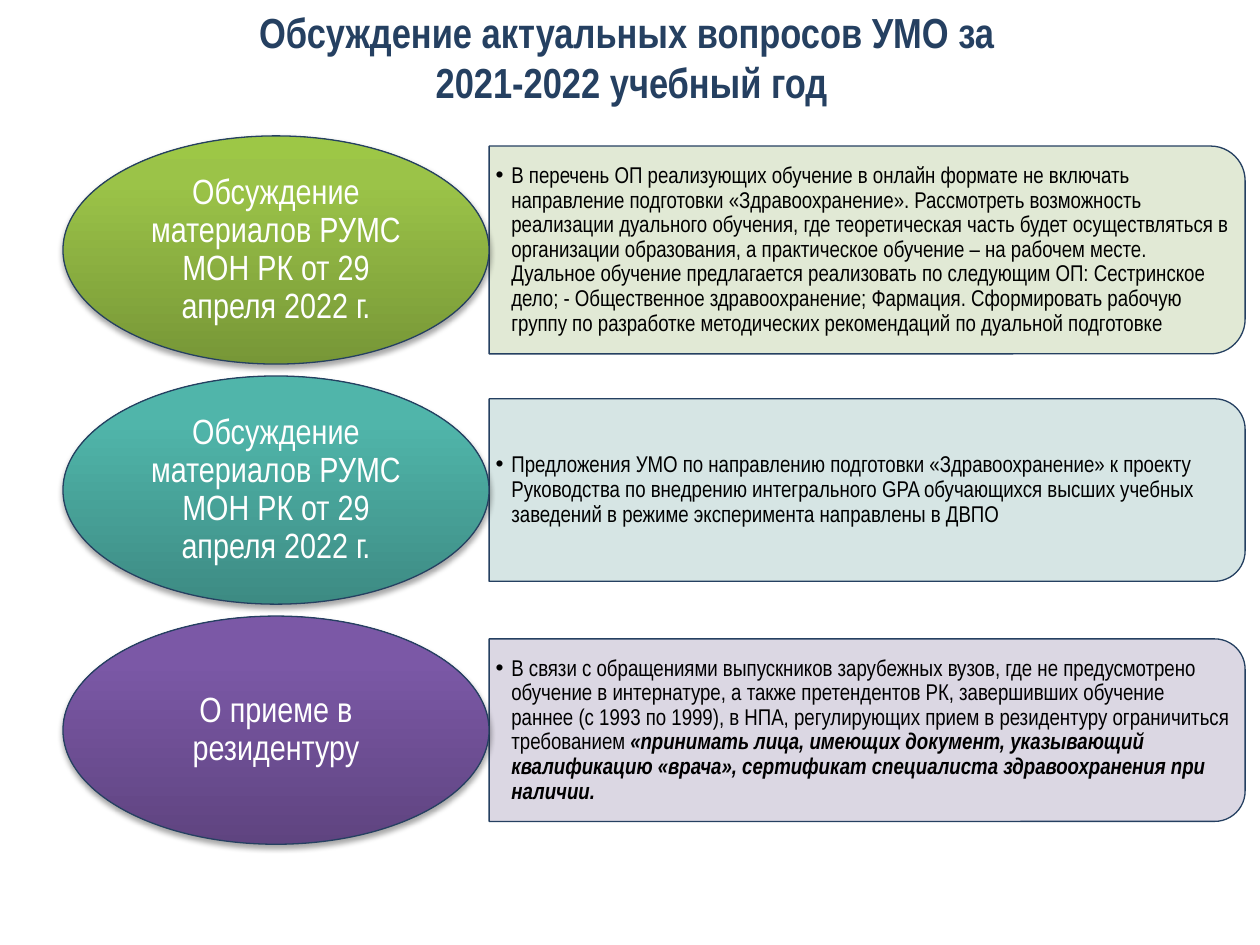
from pptx import Presentation
from pptx.dml.color import RGBColor
from pptx.enum.shapes import MSO_SHAPE
from pptx.enum.text import MSO_ANCHOR, PP_ALIGN
from pptx.oxml import parse_xml
from pptx.oxml.ns import nsdecls, qn
from pptx.util import Cm, Pt

ELLIPSE, PANEL = MSO_SHAPE.OVAL, MSO_SHAPE.ROUND_2_SAME_RECTANGLE
CENTER, LEFT = PP_ALIGN.CENTER, PP_ALIGN.LEFT
TOP, MIDDLE = MSO_ANCHOR.TOP, MSO_ANCHOR.MIDDLE

THEME = {
    "font": "Arial Narrow",
    "navy": "254061", "white": "FFFFFF", "black": "000000",
    "title_size": 24, "topic_size": 20, "detail_size": 13,
}

# Each row: topic, panel height in cm, panel colour, gradient, plain text, emphasised text
RUMS = "Обсуждение материалов РУМС МОН РК от 29 апреля 2022 г."
ROWS = [
    (RUMS, 4.19, "DEE7D1", ("779737", "9BC348", "9DC746"),
     "В перечень ОП реализующих обучение в онлайн формате не включать направление "
     "подготовки «Здравоохранение». Рассмотреть возможность реализации дуального обучения, "
     "где теоретическая часть будет осуществляться в организации образования, а практическое "
     "обучение – на рабочем месте. Дуальное обучение предлагается реализовать по следующим ОП: "
     "Сестринское дело; - Общественное здравоохранение; Фармация. Сформировать рабочую группу "
     "по разработке методических рекомендаций по дуальной подготовке", ""),
    (RUMS, 3.68, "D2E3E2", ("3D8B83", "50B5AA", "4EB8AC"),
     "Предложения УМО по направлению подготовки «Здравоохранение» к проекту Руководства по "
     "внедрению интегрального GPA обучающихся высших учебных заведений в режиме эксперимента "
     "направлены в ДВПО", ""),
    ("О приеме в резидентуру", 3.68, "D8D3E0", ("5F4480", "7B58A6", "7C57A8"),
     "В связи с обращениями выпускников зарубежных вузов, где не предусмотрено обучение в "
     "интернатуре, а также претендентов РК, завершивших обучение раннее (с 1993 по 1999), в НПА, "
     "регулирующих прием в резидентуру ограничиться требованием ",
     "«принимать лица, имеющих документ, указывающий квалификацию «врача», сертификат "
     "специалиста здравоохранения при наличии."),
]
FIRST_CENTER, ROW_STEP = 5.04, 4.84
ELLIPSE_LEFT, ELLIPSE_WIDTH, ELLIPSE_HEIGHT = 1.27, 8.59, 4.6
PANEL_LEFT, PANEL_WIDTH = ELLIPSE_LEFT + ELLIPSE_WIDTH, 15.24


def write(frame, spans, size, color, align, anchor, margins):
    """Fill a text frame with one paragraph of (text, emphasised) spans."""
    side, edge = Cm(margins[0]), Cm(margins[1])
    settings = {"word_wrap": True, "vertical_anchor": anchor, "margin_left": side,
                "margin_right": side, "margin_top": edge, "margin_bottom": edge}
    for name, value in settings.items():
        setattr(frame, name, value)
    para = frame.paragraphs[0]
    para.alignment = align
    for text, emphasised in spans:
        span = para.add_run()
        span.text = text
        font = {"name": THEME["font"], "size": Pt(size), "bold": emphasised, "italic": emphasised}
        for name, value in font.items():
            setattr(span.font, name, value)
        span.font.color.rgb = RGBColor.from_string(color)
    return para


def outline(shape):
    """Give a shape the thin navy line and no inherited shadow."""
    shape.line.color.rgb = RGBColor.from_string(THEME["navy"])
    shape.line.width = Pt(0.75)
    shape.shadow.inherit = False


deck = Presentation()
deck.slide_width, deck.slide_height = Cm(25.4), Cm(19.05)
page = deck.slides.add_slide(deck.slide_layouts[5])

# Title
title = page.shapes.title
title.left, title.top, title.width, title.height = Cm(1.3), Cm(0), Cm(22.86), Cm(3.18)
para = write(title.text_frame, [("Обсуждение актуальных вопросов УМО за ", True)],
             THEME["title_size"], THEME["navy"], CENTER, TOP, (0.25, 0.13))
para.add_line_break()
write(title.text_frame, [("2021-2022 учебный год", True)],
      THEME["title_size"], THEME["navy"], CENTER, TOP, (0.25, 0.13))
for span in para.runs:
    span.font.italic = False

for index, (topic, height, tint, gradient, plain, strong) in enumerate(ROWS):
    middle = FIRST_CENTER + index * ROW_STEP

    # Panel, turned so that its rounded corners are on the right
    panel = page.shapes.add_shape(
        PANEL, Cm(PANEL_LEFT + (PANEL_WIDTH - height) / 2), Cm(middle - PANEL_WIDTH / 2),
        Cm(height), Cm(PANEL_WIDTH))
    panel.rotation = 90
    panel.fill.solid()
    panel.fill.fore_color.rgb = RGBColor.from_string(tint)
    tint_xml = next(panel.fill._xPr.iter(qn("a:srgbClr")))
    tint_xml.append(parse_xml(f'<a:alpha {nsdecls("a")} val="90000"/>'))
    outline(panel)

    # Bulleted detail over the panel
    box_height = height - 0.4
    box = page.shapes.add_textbox(Cm(PANEL_LEFT), Cm(middle - box_height / 2),
                                  Cm(15.05), Cm(box_height))
    spans = [(plain, False)] + ([(strong, True)] if strong else [])
    para = write(box.text_frame, spans, THEME["detail_size"], THEME["black"],
                 LEFT, MIDDLE, (0.13, 0.08))
    para.line_spacing = 0.9
    para.level = 1
    properties = para._p.get_or_add_pPr()
    properties.set("marL", str(Cm(0.32)))
    properties.set("indent", str(-Cm(0.32)))
    properties.append(parse_xml(f'<a:buFont {nsdecls("a")} typeface="Arial"/>'))
    properties.append(parse_xml(f'<a:buChar {nsdecls("a")} char="•"/>'))

    # Ellipse with the topic
    ellipse = page.shapes.add_shape(
        ELLIPSE, Cm(ELLIPSE_LEFT), Cm(middle - ELLIPSE_HEIGHT / 2),
        Cm(ELLIPSE_WIDTH), Cm(ELLIPSE_HEIGHT))
    ellipse.fill.gradient()
    ellipse.fill.gradient_angle = 90
    stops = next(ellipse._element.spPr.iter(qn("a:gsLst")))
    for stop in list(stops):
        stops.remove(stop)
    for position, color in zip((0, 80, 100), gradient):
        stops.append(parse_xml(f'<a:gs {nsdecls("a")} pos="{position * 1000}">'
                               f'<a:srgbClr val="{color}"/></a:gs>'))
    outline(ellipse)
    effects = ellipse._element.spPr.find(qn("a:effectLst"))
    effects.append(parse_xml(
        f'<a:outerShdw {nsdecls("a")} blurRad="{Pt(3.1)}" dist="{Pt(1.8)}" dir="5400000" '
        f'rotWithShape="0"><a:srgbClr val="{THEME["black"]}"><a:alpha val="35000"/>'
        '</a:srgbClr></a:outerShdw>'))
    para = write(ellipse.text_frame, [(topic, False)], THEME["topic_size"], THEME["white"],
                 CENTER, MIDDLE, (0.2, 0.1))
    para.line_spacing = 0.9

deck.save("out.pptx")
